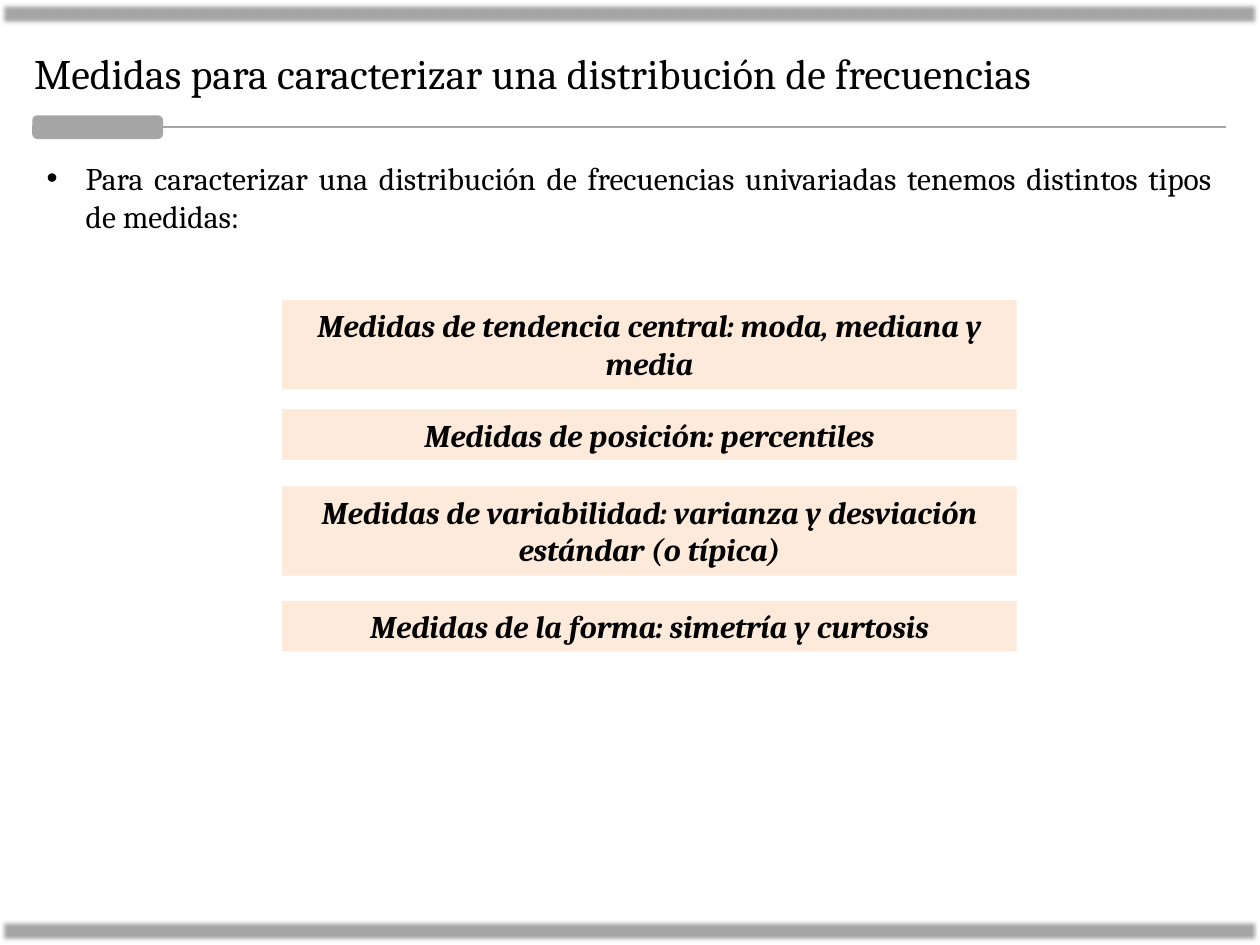
from lxml import etree
from pptx import Presentation
from pptx.dml.color import RGBColor
from pptx.enum.shapes import MSO_CONNECTOR, MSO_SHAPE
from pptx.enum.text import MSO_ANCHOR, MSO_AUTO_SIZE, PP_ALIGN
from pptx.oxml.ns import qn
from pptx.util import Inches, Pt

BLACK = RGBColor(0x00, 0x00, 0x00)
GRAY = RGBColor(0xA6, 0xA6, 0xA6)
PEACH = RGBColor(0xFD, 0xEA, 0xDA)


def put_text(sp, text, size=18, align=PP_ALIGN.LEFT, bold=False, italic=False):
    tf = sp.text_frame
    tf.word_wrap = True
    tf.auto_size = MSO_AUTO_SIZE.SHAPE_TO_FIT_TEXT
    tf.vertical_anchor = MSO_ANCHOR.TOP
    p = tf.paragraphs[0]
    p.alignment = align
    p.space_before = Pt(0)
    r = p.add_run()
    r.text = text
    f = r.font
    f.name, f.size, f.bold, f.italic = "Cambria", Pt(size), bold, italic
    f.color.rgb = BLACK
    return p


def add_block(kind, x, y, w, h, color):
    sp = s.shapes.add_shape(kind, Inches(x), Inches(y), Inches(w), Inches(h))
    sp.shadow.inherit = False
    sp.fill.solid()
    sp.fill.fore_color.rgb = color
    sp.line.fill.background()
    return sp


prs = Presentation()
prs.slide_width, prs.slide_height = Inches(10), Inches(7.5)
s = prs.slides.add_slide(prs.slide_layouts[1])

title, body = s.placeholders
title.left, title.top = Inches(0.17), Inches(0.33)
title.width, title.height = Inches(9.56), Inches(0.5)
put_text(title, "Medidas para caracterizar una distribución de frecuencias", size=24)

body.left, body.top = Inches(0.27), Inches(1.21)
body.width, body.height = Inches(9.45), Inches(0.71)
p = put_text(
    body,
    "Para caracterizar una distribución de frecuencias univariadas "
    "tenemos distintos tipos de medidas:",
    align=PP_ALIGN.JUSTIFY,
)
pPr = p._p.get_or_add_pPr()
pPr.set("marL", str(Inches(0.31)))
pPr.set("indent", str(-Inches(0.31)))

measures = [
    (2.38, 0.71, "Medidas de tendencia central: moda, mediana y media"),
    (3.25, 0.4, "Medidas de posición: percentiles"),
    (3.86, 0.71, "Medidas de variabilidad: varianza y desviación estándar (o típica)"),
    (4.77, 0.4, "Medidas de la forma: simetría y curtosis"),
]
for y, h, text in measures:
    sp = add_block(MSO_SHAPE.RECTANGLE, 2.24, y, 5.83, h, PEACH)
    put_text(sp, text, align=PP_ALIGN.CENTER, bold=True, italic=True)

for y in (0.01, 7.29):
    bar = add_block(MSO_SHAPE.RECTANGLE, 0, y, 10, 0.2, GRAY)
    effects = bar._element.spPr.find(qn("a:effectLst"))
    etree.SubElement(effects, qn("a:softEdge")).set("rad", str(Pt(2.5)))

tab = add_block(MSO_SHAPE.ROUNDED_RECTANGLE, 0.27, 0.93, 1.01, 0.16, GRAY)
tab.line.color.rgb = GRAY
tab.line.width = Pt(2)

rule = s.shapes.add_connector(
    MSO_CONNECTOR.STRAIGHT, Inches(1.28), Inches(1.01), Inches(9.73), Inches(1.01)
)
rule.begin_connect(tab, 3)
rule.line.color.rgb = GRAY
rule.line.width = Pt(1.25)
etree.SubElement(rule._element.spPr, qn("a:effectLst"))

prs.save("out.pptx")
